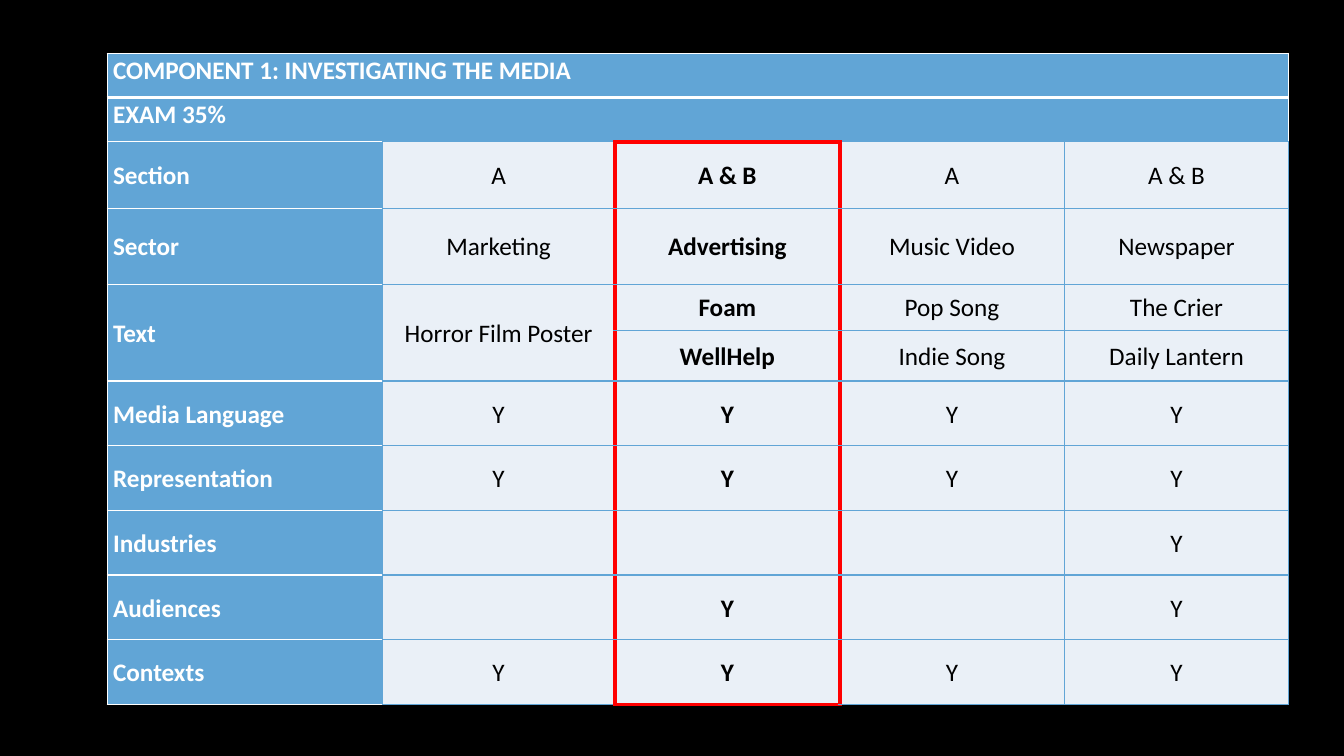
import pptx
import pptx.dml.color
import pptx.enum.text
import pptx.oxml
import pptx.oxml.ns
import pptx.util

Cm, Pt = pptx.util.Cm, pptx.util.Pt
RGB = pptx.dml.color.RGBColor.from_string
PP_ALIGN = pptx.enum.text.PP_ALIGN
ANCHOR = pptx.enum.text.MSO_ANCHOR

COLORS = {"black": "000000", "white": "FFFFFF", "blue": "61A5D6",
          "pale": "EAF0F7", "red": "FF0000"}
COL_WIDTHS = [6.93, 5.87, 5.66, 5.66, 5.66]
ROW_HEIGHTS = [1.11, 1.11, 1.68, 1.91, 1.16, 1.28] + [1.63] * 5
HEADER_ROWS = 2
FOCUS_COL = 2  # the column outlined in red

ROWS = [
    ["COMPONENT 1: INVESTIGATING THE MEDIA", "", "", "", ""],
    ["EXAM 35%", "", "", "", ""],
    ["Section", "A", "A & B", "A", "A & B"],
    ["Sector", "Marketing", "Advertising", "Music Video", "Newspaper"],
    ["Text", "Horror Film Poster", "Foam", "Pop Song", "The Crier"],
    ["", "", "WellHelp", "Indie Song", "Daily Lantern"],
    ["Media Language", "Y", "Y", "Y", "Y"],
    ["Representation", "Y", "Y", "Y", "Y"],
    ["Industries", "", "", "", "Y"],
    ["Audiences", "", "Y", "", "Y"],
    ["Contexts", "Y", "Y", "Y", "Y"],
]
LAST_ROW = len(ROWS) - 1


def add_border(cell, side, color, width):
    """Add one cell edge; call in the order L, R, T, B, before the fill."""
    cell._tc.get_or_add_tcPr().append(pptx.oxml.parse_xml(
        f'<a:ln{side} {pptx.oxml.ns.nsdecls("a")} w="{Pt(width)}">'
        f'<a:solidFill><a:srgbClr val="{COLORS[color]}"/></a:solidFill>'
        f'</a:ln{side}>'))


def edges(row, col):
    """Return colour and width of each edge of a cell."""
    label = row < HEADER_ROWS or col == 0
    borders = {side: ("white" if label else "blue", 1) for side in "LRTB"}
    if row < HEADER_ROWS:
        borders["B" if row == 0 else "T"] = ("white", 3)
        if row == HEADER_ROWS - 1 and col == FOCUS_COL:
            borders["B"] = ("red", 3)
    elif col == 0:
        borders["R"] = ("blue", 1)
    else:
        if col in (FOCUS_COL - 1, FOCUS_COL):
            borders["R"] = ("red", 3)
        if col in (FOCUS_COL, FOCUS_COL + 1):
            borders["L"] = ("red", 3)
        if col == FOCUS_COL and row == HEADER_ROWS:
            borders["T"] = ("red", 3)
        if col == FOCUS_COL and row == LAST_ROW:
            borders["B"] = ("red", 3)
    return borders


# Slide with a black background
prs = pptx.Presentation()
prs.slide_width, prs.slide_height = Cm(33.87), Cm(19.05)
s = prs.slides.add_slide(prs.slide_layouts[6])
s.background.fill.solid()
s.background.fill.fore_color.rgb = RGB(COLORS["black"])

# Table grid
table = s.shapes.add_table(len(ROWS), len(COL_WIDTHS), Cm(2.7), Cm(1.35),
                           Cm(sum(COL_WIDTHS)), Cm(sum(ROW_HEIGHTS))).table
table.first_row = table.horz_banding = False
for column, width in zip(table.columns, COL_WIDTHS):
    column.width = Cm(width)
for table_row, height in zip(table.rows, ROW_HEIGHTS):
    table_row.height = Cm(height)

# Cell text, borders and fills
for row, texts in enumerate(ROWS):
    for col, text in enumerate(texts):
        cell = table.cell(row, col)
        header = row < HEADER_ROWS
        label = header or col == 0
        for side, (color, width) in edges(row, col).items():
            add_border(cell, side, color, width)
        cell.fill.solid()
        cell.fill.fore_color.rgb = RGB(COLORS["blue" if label else "pale"])
        cell.margin_left = cell.margin_right = Cm(0.15)
        cell.margin_top = cell.margin_bottom = 0
        cell.vertical_anchor = ANCHOR.TOP if header else ANCHOR.MIDDLE
        p = cell.text_frame.paragraphs[0]
        p.text = text
        p.alignment = PP_ALIGN.LEFT if label else PP_ALIGN.CENTER
        p.line_spacing = 1.07
        p.font.name, p.font.size = "Calibri", Pt(18)
        p.font.bold = label or col == FOCUS_COL
        p.font.color.rgb = RGB(COLORS["white" if label else "black"])

# Merged cells: full-width headings, then the two-row "Text" cells
for row in range(HEADER_ROWS):
    table.cell(row, 0).merge(table.cell(row, len(COL_WIDTHS) - 1))
for col in (0, 1):
    table.cell(4, col).merge(table.cell(5, col))

prs.save("out.pptx")
